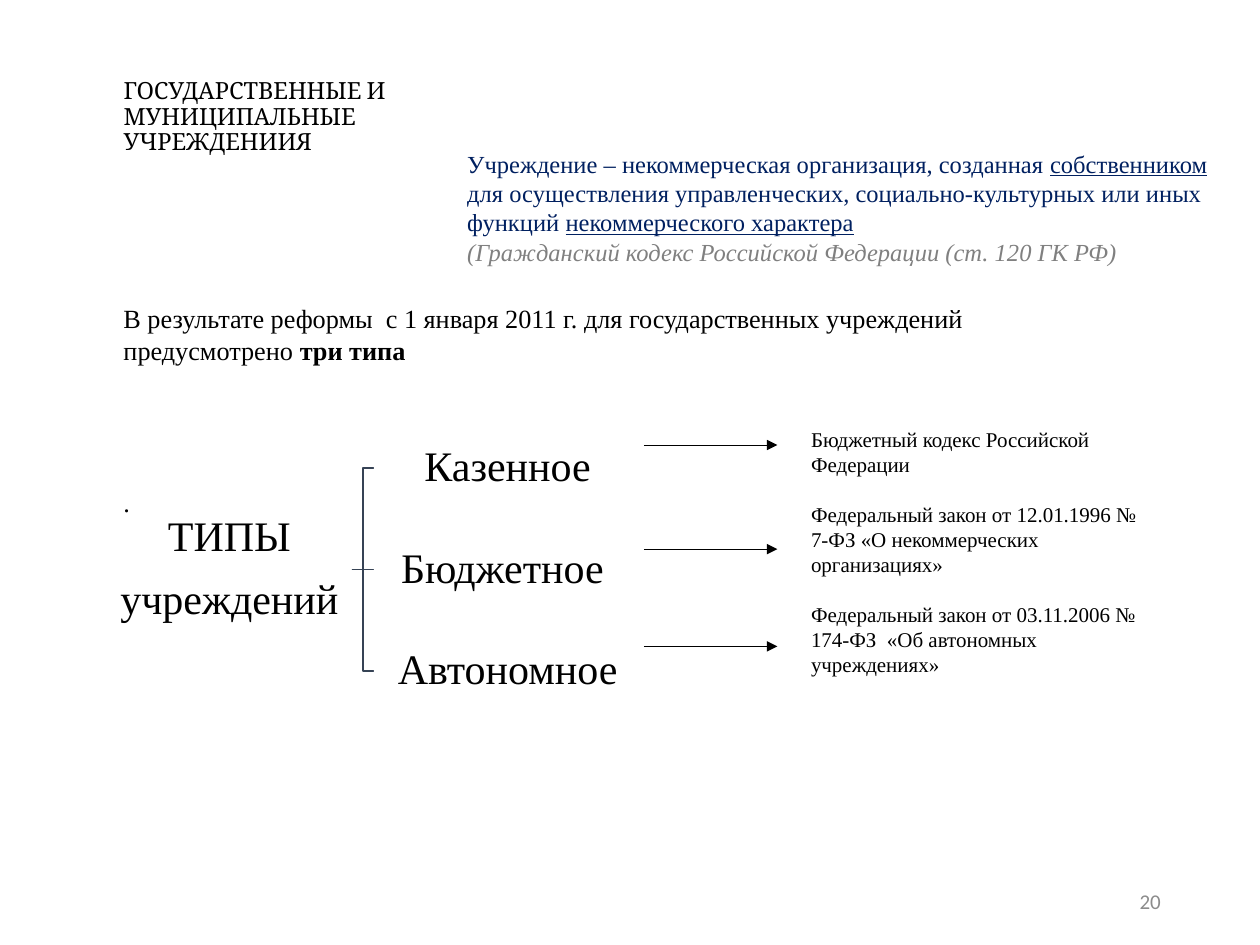
import dataclasses

import pptx
import pptx.dml.color
import pptx.enum.shapes
import pptx.enum.text
import pptx.oxml
import pptx.oxml.ns
import pptx.util

Cm = pptx.util.Cm
Pt = pptx.util.Pt
Align = pptx.enum.text.PP_ALIGN
Anchor = pptx.enum.text.MSO_ANCHOR


@dataclasses.dataclass(frozen=True)
class Theme:
    serif: str = "Times New Roman"
    head: str = "Cambria"
    sans: str = "Calibri"
    black: str = "000000"
    white: str = "FFFFFF"
    navy: str = "002060"
    grey: str = "808080"
    pale: str = "8C8C8C"
    slate: str = "364355"
    title: float = 13.5
    lead: float = 15
    quote: float = 14
    node: float = 24
    small: float = 12


THEME = Theme()
KINDS = ("Казенное", "Бюджетное ", "Автономное")
LAWS = (
    "Бюджетный кодекс Российской Федерации",
    "Федеральный закон от 12.01.1996 № 7-ФЗ «О некоммерческих организациях»",
    "Федеральный закон от 03.11.2006 № 174-ФЗ\u00a0 «Об автономных учреждениях»",
)
ARROWS = (8.97, 11.07, 13.03)
# Tree grid, in cm
LEFT, WIDE, HIGH = 7.54, 5.39, 1.65
MID, STEP = 11.48, 2.05
STEM = 7.09


def color(code):
    return pptx.dml.color.RGBColor.from_string(code)


def style(par, size, code=THEME.black, face=THEME.serif):
    par.font.size = Pt(size)
    par.font.name = face
    par.font.color.rgb = color(code)


def fill_text(frame, lines, size, code=THEME.black, face=THEME.serif,
              gap=0, align=Align.LEFT, lead=1.0):
    """Write lines; each is a string or a list of (text, font flags)."""
    frame.word_wrap = True
    for i, line in enumerate(lines):
        par = frame.paragraphs[0] if i == 0 else frame.add_paragraph()
        parts = [(line, {})] if isinstance(line, str) else line
        for text, flags in parts:
            run = par.add_run()
            run.text = text
            for name, value in flags.items():
                setattr(run.font, name, value)
        style(par, size, code, face)
        par.alignment = align
        par.line_spacing = lead
        par.space_before = Pt(gap if i else 0)


def add_text(slide, x, y, w, h, lines, size, **look):
    box = slide.shapes.add_textbox(Cm(x), Cm(y), Cm(w), Cm(h))
    fill_text(box.text_frame, lines, size, **look)
    return box.text_frame


def add_node(slide, x, y, w, h, lines, fill=None):
    kind = pptx.enum.shapes.MSO_SHAPE.RECTANGLE
    node = slide.shapes.add_shape(kind, Cm(x), Cm(y), Cm(w), Cm(h))
    node.shadow.inherit = False
    node.line.fill.background()
    if fill:
        node.fill.solid()
        node.fill.fore_color.rgb = color(fill)
    else:
        node.fill.background()
    frame = node.text_frame
    frame.margin_left = frame.margin_right = Cm(0.05)
    frame.margin_top = frame.margin_bottom = Cm(0.05)
    frame.vertical_anchor = Anchor.MIDDLE
    fill_text(frame, lines, THEME.node, gap=10, align=Align.CENTER, lead=0.9)


def add_branch(slide, y):
    """Draw an elbow from the stem to the node at height y."""
    bend = (STEM + LEFT) / 2
    pen = slide.shapes.build_freeform(Cm(STEM), Cm(MID))
    points = [(bend, MID), (bend, y), (LEFT, y)] if y != MID else [(LEFT, y)]
    pen.add_line_segments([(Cm(a), Cm(b)) for a, b in points], close=False)
    branch = pen.convert_to_shape()
    branch.shadow.inherit = False
    branch.fill.background()
    branch.line.color.rgb = color(THEME.slate)
    branch.line.width = Pt(1)


def add_arrow(slide, y):
    kind = pptx.enum.shapes.MSO_CONNECTOR.STRAIGHT
    arrow = slide.shapes.add_connector(kind, Cm(12.98), Cm(y), Cm(15.67), Cm(y))
    arrow.line.color.rgb = color(THEME.black)
    arrow.line.width = Pt(0.5)
    tip = pptx.oxml.parse_xml(
        "<a:tailEnd %s type='triangle'/>" % pptx.oxml.ns.nsdecls("a"))
    arrow.line._get_or_add_ln().append(tip)
    flat = pptx.oxml.parse_xml("<a:effectLst %s/>" % pptx.oxml.ns.nsdecls("a"))
    arrow._element.spPr.append(flat)


def add_title(slide, text):
    title = slide.shapes.title
    title.left, title.top = Cm(2.24), Cm(0.38)
    title.width, title.height = Cm(8.26), Cm(3.99)
    title.text_frame.vertical_anchor = Anchor.MIDDLE
    fill_text(title.text_frame, [text], THEME.title, face=THEME.head, lead=0.9)


def add_tree(slide):
    spots = [MID + (i - 1) * STEP for i in range(len(KINDS))]
    for y in spots:
        add_branch(slide, y)
    add_node(slide, 2.29, 9.02, 4.67, 4.93, ["ТИПЫ", "учреждений"])
    for y, name in zip(spots, KINDS):
        add_node(slide, LEFT, y - HIGH / 2, WIDE, HIGH, [name], THEME.white)


def main():
    deck = pptx.Presentation()
    deck.slide_width, deck.slide_height = Cm(25.4), Cm(19.05)
    slide = deck.slides.add_slide(deck.slide_layouts[5])

    # Heading and reform note
    add_title(slide, "ГОСУДАРСТВЕННЫЕ И МУНИЦИПАЛЬНЫЕ УЧРЕЖДЕНИИЯ")
    note = [("В результате реформы  с 1 января 2011 г. для государственных "
             "учреждений предусмотрено ", {}), ("три типа", {"bold": True})]
    add_text(slide, 2.24, 5.97, 19.91, 4.75, [note, "."], THEME.lead, gap=69)

    # Tree of types, with arrows to the laws
    add_tree(slide)
    add_text(slide, 16.1, 8.48, 7.21, 5.38, LAWS, THEME.small, gap=13.8)
    for y in ARROWS:
        add_arrow(slide, y)

    # Definition
    line = {"underline": True}
    quote = [
        ("Учреждение – некоммерческая организация, созданная ", {}),
        ("собственником", line),
        (" для осуществления управленческих, социально-культурных "
         "или иных функций ", {}),
        ("некоммерческого характера", line),
    ]
    cite = "(Гражданский кодекс Российской Федерации (ст. 120 ГК РФ)"
    frame = add_text(slide, 9.17, 2.87, 15.95, 2.64, [quote, cite],
                     THEME.quote, code=THEME.navy)
    source = frame.paragraphs[1].runs[0].font
    source.italic = True
    source.color.rgb = color(THEME.grey)

    # Page number
    page = add_text(slide, 17.93, 17.65, 5.72, 1.02, ["20"], THEME.small,
                    code=THEME.pale, face=THEME.sans, align=Align.RIGHT)
    page.vertical_anchor = Anchor.MIDDLE

    deck.save("out.pptx")


if __name__ == "__main__":
    main()
